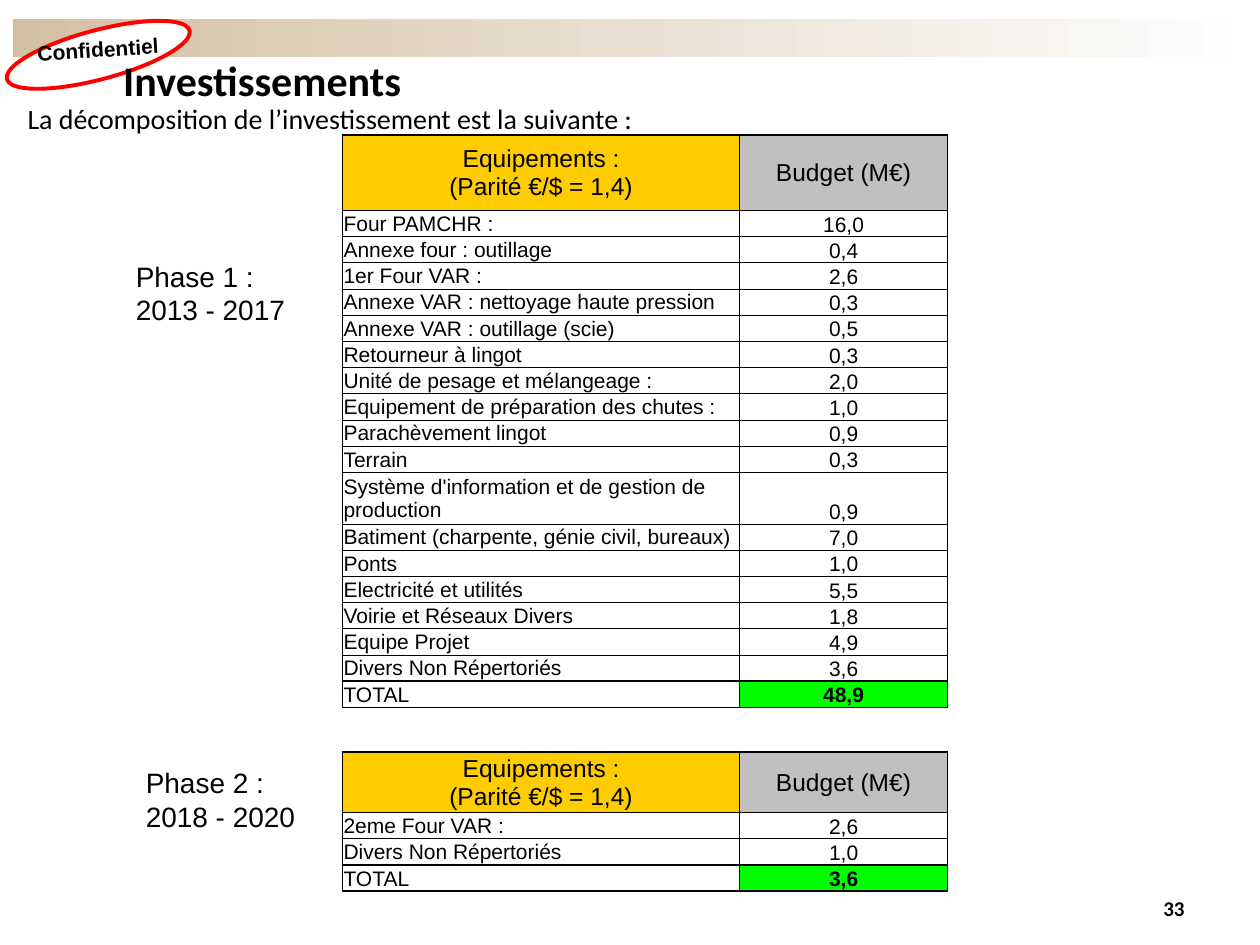
from lxml import etree
from pptx import Presentation
from pptx.dml.color import RGBColor
from pptx.enum.shapes import MSO_SHAPE
from pptx.enum.text import MSO_ANCHOR, PP_ALIGN
from pptx.oxml.ns import qn
from pptx.util import Inches, Pt

LEFT, CENTER, RIGHT = PP_ALIGN.LEFT, PP_ALIGN.CENTER, PP_ALIGN.RIGHT
TOP, MIDDLE, BOTTOM = MSO_ANCHOR.TOP, MSO_ANCHOR.MIDDLE, MSO_ANCHOR.BOTTOM
RECT, OVAL = MSO_SHAPE.RECTANGLE, MSO_SHAPE.OVAL
COLORS = {"black": "000000", "white": "FFFFFF", "sand": "D3C0A3", "red": "FF0000",
          "yellow": "FFCC00", "grey": "C0C0C0", "green": "00FF00"}
RGB = {name: RGBColor.from_string(value) for name, value in COLORS.items()}

prs = Presentation()
prs.slide_width, prs.slide_height = Inches(10), Inches(7.5)
COL, ROW = prs.slide_width / 100, prs.slide_height / 75
s = prs.slides.add_slide(prs.slide_layouts[6])


def grid(x, y, w, h):
    return int(x * COL), int(y * ROW), int(w * COL), int(h * ROW)


def write(p, text, size, font="Arial", bold=False, align=LEFT):
    p.alignment = align
    for i, line in enumerate(text.split("\n")):
        if i:
            p.add_line_break()
        r = p.add_run()
        r.text = line
        r.font.name, r.font.size, r.font.bold = font, Pt(size), bold
        r.font.color.rgb = RGB["black"]


band = s.shapes.add_shape(RECT, *grid(1, 1.5, 98.8, 3))
band.shadow.inherit = False
band.line.fill.background()
band.fill.gradient()
band.fill.gradient_angle = 0
for stop, position, name in zip(band.fill.gradient_stops, (0, 1), ("sand", "white")):
    stop.position = position
    stop.color.rgb = RGB[name]

stamp = s.shapes.add_shape(OVAL, *grid(0.3, 2.4, 15, 3.9))
stamp.shadow.inherit = False
stamp.rotation = 345.1
stamp.fill.solid()
stamp.fill.fore_color.rgb = RGB["white"]
stamp.line.color.rgb = RGB["red"]
stamp.line.width = Pt(2.25)

texts = [
    ((0.8, 2.4, 14, 3.7), ["Confidentiel"], 12, "Arial", True, CENTER, TOP, 356.3),
    ((88.6, 70.6, 6.4, 2.9), ["33"], 12, "Calibri", True, RIGHT, TOP, 0),
    ((8.8, 2.8, 90, 7.1), ["Investissements"], 24, "Calibri", True, LEFT, MIDDLE, 0),
    ((1.2, 7.6, 96.1, 6.6), ["La décomposition de l’investissement est la suivante :"],
     16, "Calibri", False, LEFT, TOP, 0),
    ((9.8, 20.1, 15, 6.4), ["Phase 1 :", "2013 - 2017"], 16, "Arial", False, LEFT, TOP, 0),
    ((10.6, 60.3, 15, 6.4), ["Phase 2 :", "2018 - 2020"], 16, "Arial", False, LEFT, TOP, 0),
]
for place, lines, size, font, bold, align, anchor, turn in texts:
    sp = s.shapes.add_textbox(*grid(*place))
    sp.rotation = turn
    tf = sp.text_frame
    tf.word_wrap, tf.vertical_anchor = True, anchor
    for i, line in enumerate(lines):
        p = tf.add_paragraph() if i else tf.paragraphs[0]
        write(p, line, size, font, bold, align)

header = ("Equipements :\n(Parité €/$ = 1,4)", "Budget (M€)")
phase1 = [
    ("Four PAMCHR :", "16,0"),
    ("Annexe four : outillage", "0,4"),
    ("1er Four VAR :", "2,6"),
    ("Annexe VAR : nettoyage haute pression", "0,3"),
    ("Annexe VAR : outillage (scie)", "0,5"),
    ("Retourneur à lingot", "0,3"),
    ("Unité de pesage et mélangeage :", "2,0"),
    ("Equipement de préparation des chutes :", "1,0"),
    ("Parachèvement lingot", "0,9"),
    ("Terrain", "0,3"),
    ("Système d'information et de gestion de production", "0,9"),
    ("Batiment (charpente, génie civil, bureaux)", "7,0"),
    ("Ponts", "1,0"),
    ("Electricité et utilités", "5,5"),
    ("Voirie et Réseaux Divers", "1,8"),
    ("Equipe Projet", "4,9"),
    ("Divers Non Répertoriés", "3,6"),
    ("TOTAL", "48,9"),
]
phase2 = [("2eme Four VAR :", "2,6"), ("Divers Non Répertoriés", "1,0"), ("TOTAL", "3,6")]

for top, height, tall_rows, header_rule, items in [
    (10.7, 45.5, {0: 6, 11: 4.1}, 1, phase1),
    (59.7, 11, {0: 4.8}, 0.5, phase2),
]:
    rows = [header] + items
    last = len(rows) - 1
    row_height = (height - sum(tall_rows.values())) / (len(rows) - len(tall_rows))
    rules = [1, header_rule] + [0.5] * (last - 2) + [1, 1]
    table = s.shapes.add_table(len(rows), 2, *grid(27.2, top, 48, height)).table
    table.first_row = table.horz_banding = False
    for column, width in zip(table.columns, (31.5, 16.5)):
        column.width = int(width * COL)
    for i, row in enumerate(rows):
        table.rows[i].height = int(tall_rows.get(i, row_height) * ROW)
        for j, text in enumerate(row):
            cell = table.cell(i, j)
            cell.margin_left = cell.margin_right = cell.margin_top = Pt(0.5)
            cell.margin_bottom = 0
            cell.vertical_anchor = MIDDLE if i == 0 or (j == 0 and i < last) else BOTTOM
            write(cell.text_frame.paragraphs[0], text, 12 if i else 14,
                  bold=i == last and j == 1, align=CENTER if j or i == 0 else LEFT)
            tcPr = cell._tc.get_or_add_tcPr()
            for side, width in zip("LRTB", (1, 1, rules[i], rules[i + 1])):
                ln = etree.SubElement(tcPr, qn(f"a:ln{side}"), w=str(Pt(width)))
                fill = etree.SubElement(ln, qn("a:solidFill"))
                etree.SubElement(fill, qn("a:srgbClr"), val=COLORS["black"])
            name = ("yellow", "grey")[j] if i == 0 else "green" if i == last and j else None
            if name:
                cell.fill.solid()
                cell.fill.fore_color.rgb = RGB[name]
            else:
                cell.fill.background()

prs.save("out.pptx")
